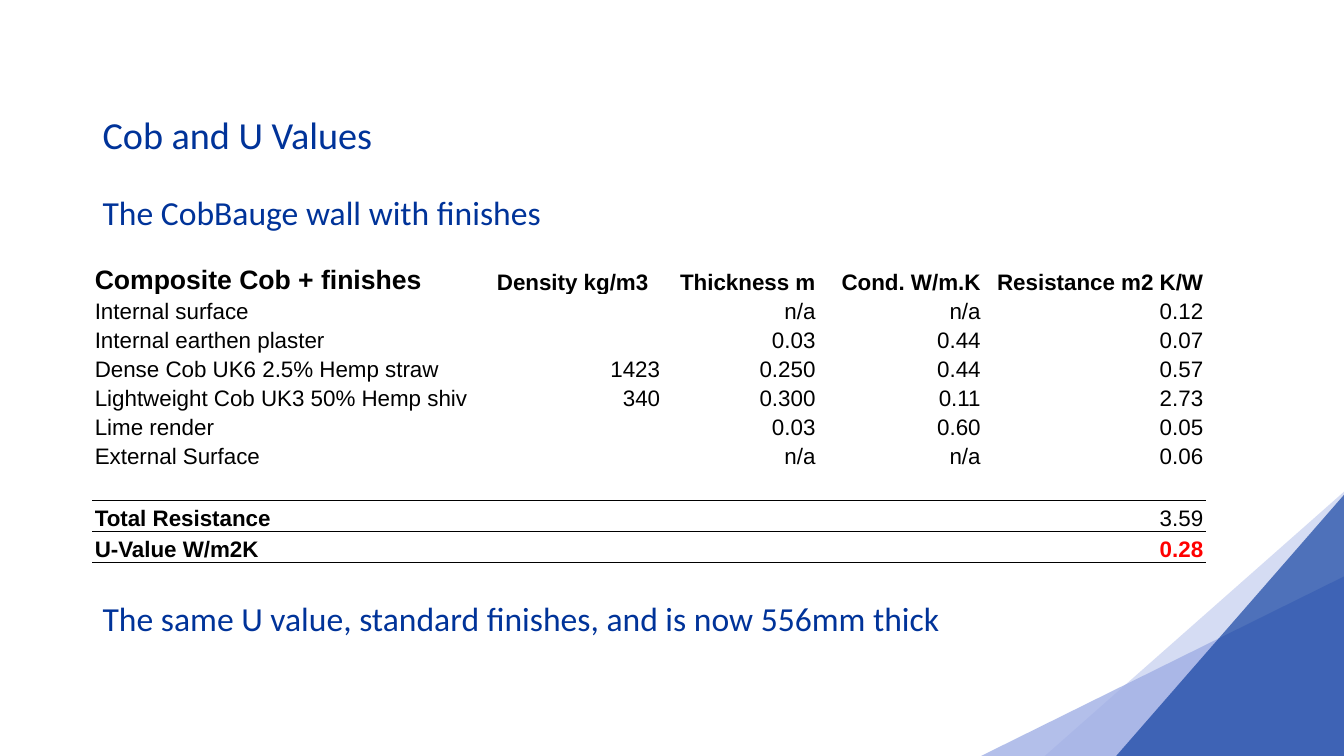
"""Build the slide on cob walls and their U values."""
from lxml.etree import SubElement
from pptx import Presentation
from pptx.dml.color import RGBColor
from pptx.enum.shapes import MSO_SHAPE
from pptx.enum.text import MSO_ANCHOR, PP_ALIGN
from pptx.oxml.ns import qn
from pptx.util import Pt

COLORS = {"navy": "003399", "pale": "C5CEEF", "mid": "9FAEE5",
          "ink": "000000", "red": "FF0000"}
WIDTH, HEIGHT = 960, 540
LEFT = 66.25

# width, height, colour, opacity in percent of each corner triangle
CORNER = [
    (213.75, 188.75, "pale", 71),
    (259.25, 128.25, "mid", 79),
    (162.75, 186.5, "navy", 63),
]
# text, top, height, size
LINES = [
    ("Cob and U Values", 75.5, 45.5, 27.3),
    ("The CobBauge wall with finishes", 140.5, 26, 24),
    ("The same U value, standard finishes, and is now 556mm thick",
     430.5, 26, 24),
]
ROWS = [
    ("Composite Cob + finishes", "Density kg/m3", "Thickness m",
     "Cond. W/m.K", "Resistance m2 K/W"),
    ("Internal surface", "", "n/a", "n/a", "0.12"),
    ("Internal earthen plaster", "", "0.03", "0.44", "0.07"),
    ("Dense Cob UK6 2.5% Hemp straw", "1423", "0.250", "0.44", "0.57"),
    ("Lightweight Cob UK3 50% Hemp shiv", "340", "0.300", "0.11", "2.73"),
    ("Lime render", "", "0.03", "0.60", "0.05"),
    ("External Surface", "", "n/a", "n/a", "0.06"),
    ("", "", "", "", ""),
    ("Total Resistance", "", "", "", "3.59"),
    ("U-Value W/m2K", "", "", "", "0.28"),
]
COLS = [287.25, 119.5, 111, 118, 159]
TALL = [25] + [20.75] * 6 + [22.25] * 3
TOP = 185.75
GAP, TOTAL, VALUE = 7, 8, 9


def rgb(name):
    return RGBColor.from_string(COLORS[name])


def write(frame, text, size=16, font="Arial", color="ink", bold=False,
          align=PP_ALIGN.LEFT, space=None):
    para = frame.paragraphs[0]
    para.alignment = align
    para.line_spacing = space
    if not text:
        SubElement(para._p, qn("a:endParaRPr"), sz=str(size * 100))
        return
    run = para.add_run()
    run.text = text
    run.font.size, run.font.name, run.font.bold = Pt(size), font, bold
    run.font.color.rgb = rgb(color)


def paint(node, name):
    fill = SubElement(node, qn("a:solidFill"))
    return SubElement(fill, qn("a:srgbClr"), val=COLORS[name])


def add_corner(slide):
    for wide, high, color, alpha in CORNER:
        x = WIDTH - wide / 2 - high / 2
        y = HEIGHT - high / 2 - wide / 2
        shape = slide.shapes.add_shape(MSO_SHAPE.ISOSCELES_TRIANGLE, Pt(x),
                                       Pt(y), Pt(high), Pt(wide))
        shape.adjustments[0] = 0
        shape.rotation = 270
        shape.shadow.inherit = False
        shape.line.fill.background()
        shape.fill.solid()
        shape.fill.fore_color.rgb = rgb(color)
        tint = shape.fill._xPr.find(".//" + qn("a:srgbClr"))
        SubElement(tint, qn("a:alpha"), val=str(alpha * 1000))


def add_lines(slide):
    for text, top, high, size in LINES:
        box = slide.shapes.add_textbox(Pt(LEFT), Pt(top), Pt(828), Pt(high))
        frame = box.text_frame
        frame.word_wrap = True
        frame.vertical_anchor = MSO_ANCHOR.MIDDLE
        write(frame, text, size=size, font="Calibri", color="navy", space=0.9)


def style(cell, row, col):
    cell.vertical_anchor = MSO_ANCHOR.BOTTOM
    cell.margin_left = cell.margin_right = cell.margin_top = Pt(1.5)
    cell.margin_bottom = 0
    sides = ["a:lnT"] * (row >= TOTAL) + ["a:lnB"] * (row >= GAP)
    for side in sides:
        edge = SubElement(cell._tc.get_or_add_tcPr(), qn(side),
                          w=str(Pt(1)))
        paint(edge, "ink")
    cell.fill.background()


def add_grid(slide):
    grid = slide.shapes.add_table(len(ROWS), len(COLS), Pt(LEFT), Pt(TOP),
                                  Pt(sum(COLS)), Pt(sum(TALL))).table
    grid.first_row = grid.horz_banding = False
    for col, wide in zip(grid.columns, COLS):
        col.width = Pt(wide)
    for r, (texts, high) in enumerate(zip(ROWS, TALL)):
        grid.rows[r].height = Pt(high)
        for c, text in enumerate(texts):
            cell = grid.cell(r, c)
            style(cell, r, c)
            left = c == 0 or (r == 0 and c == 1)
            last = r == VALUE and c == len(COLS) - 1
            write(cell.text_frame, text,
                  size=19 if r == c == 0 else 16,
                  color="red" if last else "ink",
                  bold=r == 0 or last or (r >= TOTAL and c == 0),
                  align=PP_ALIGN.LEFT if left else PP_ALIGN.RIGHT)


def main():
    deck = Presentation()
    deck.slide_width, deck.slide_height = Pt(WIDTH), Pt(HEIGHT)
    slide = deck.slides.add_slide(deck.slide_layouts[6])
    add_corner(slide)
    add_lines(slide)
    add_grid(slide)
    deck.save("out.pptx")


if __name__ == "__main__":
    main()
